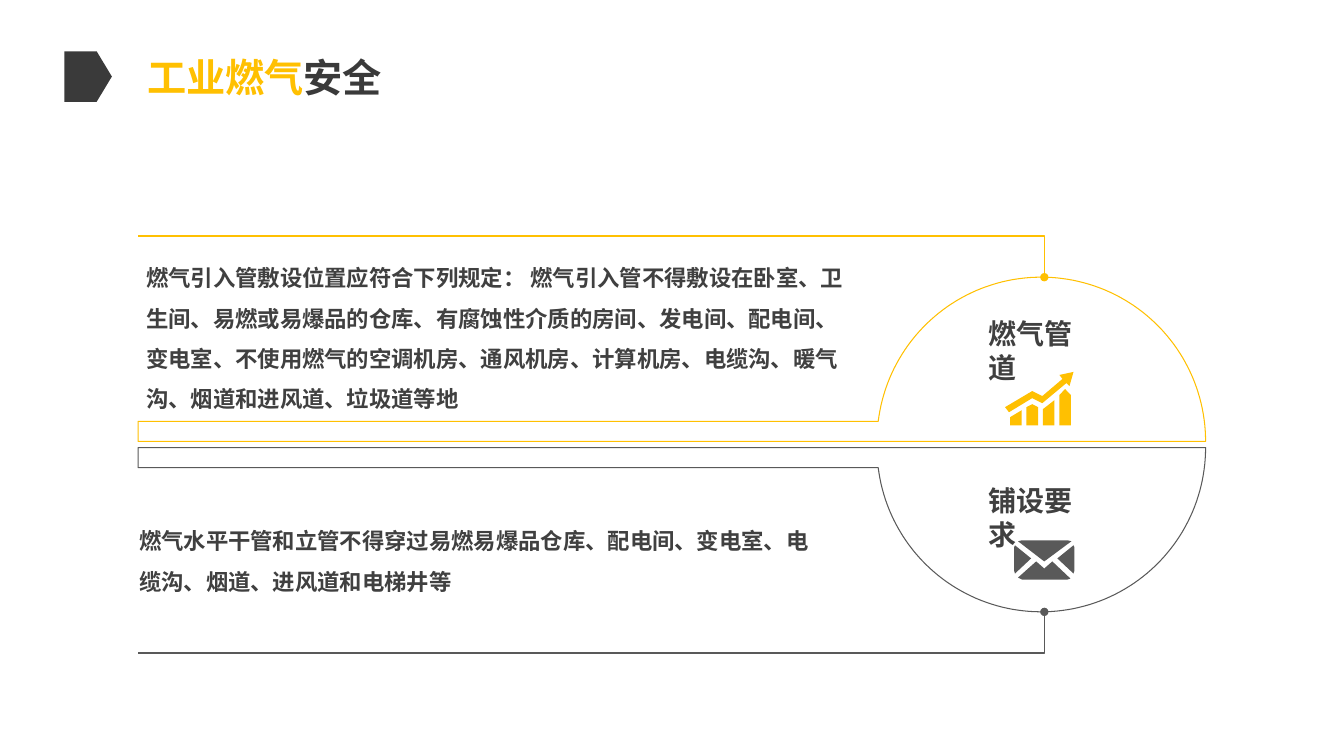
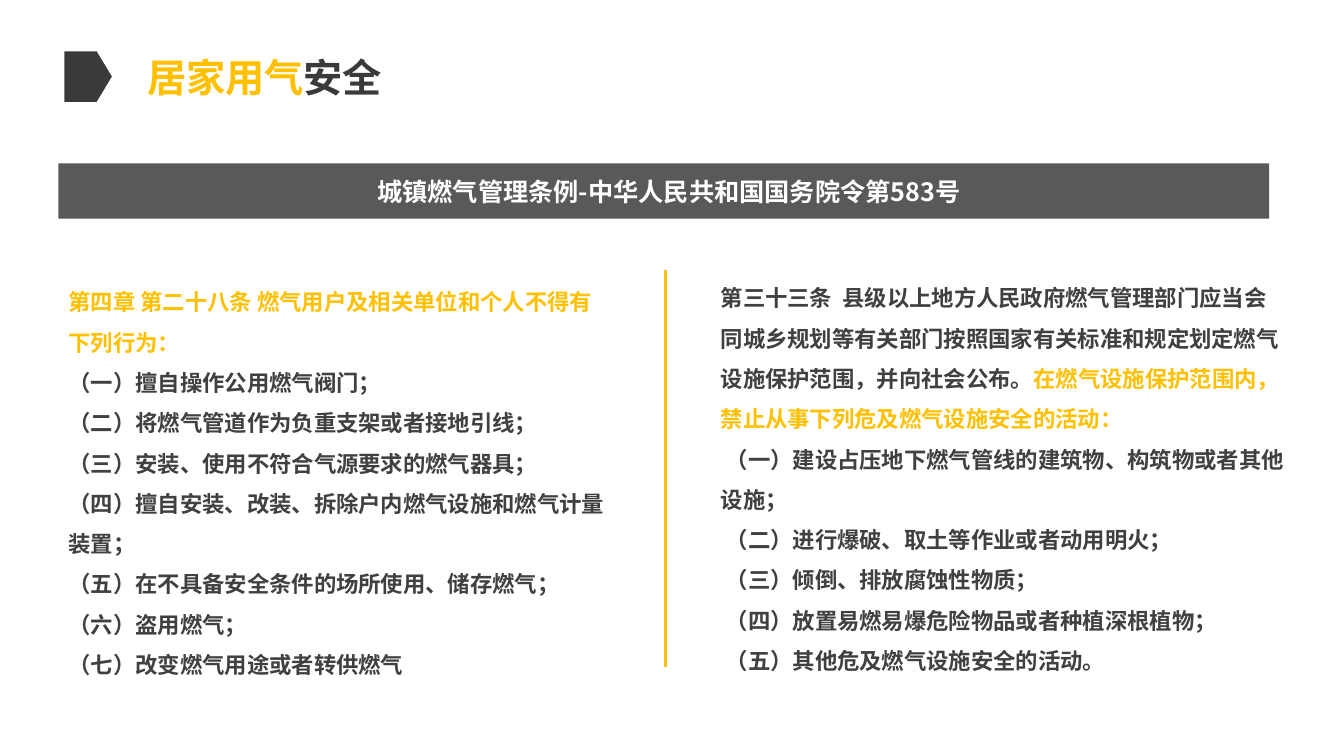
import math
from dataclasses import dataclass

import pptx
import pptx.dml.color
import pptx.enum.shapes
import pptx.enum.text
import pptx.oxml.ns
import pptx.slide
import pptx.util
from lxml import etree

RGBColor = pptx.dml.color.RGBColor
ShapeType = pptx.enum.shapes.MSO_SHAPE

# Shared look
AMBER = RGBColor(0xFF, 0xC0, 0x01)
GREY = RGBColor(0x59, 0x59, 0x59)
CHARCOAL = RGBColor(0x3A, 0x3A, 0x3A)
BODY_COLOR = RGBColor(0x40, 0x40, 0x40)
WHITE = RGBColor(0xFF, 0xFF, 0xFF)
FONT = "Noto Sans CJK SC"
COLUMNS, ROWS = 133.33, 75  # grid cells are a tenth of an inch

Point = tuple[float, float]


@dataclass(frozen=True)
class Box:
    column: float
    row: float
    width: float
    height: float

    def lengths(self) -> list[pptx.util.Length]:
        return [cells(n) for n in (self.column, self.row, self.width, self.height)]


@dataclass(frozen=True)
class Run:
    text: str
    color: RGBColor = BODY_COLOR


@dataclass(frozen=True)
class Indent:
    left: float = 0
    first: float = 0


@dataclass(frozen=True)
class Topic:
    label: str
    label_row: float
    color: RGBColor
    mirrored: bool
    icon: list[list[Point]]


def cells(count: float) -> pptx.util.Length:
    return pptx.util.Inches(count / 10)


# Text
def set_font(font, size: float, color: RGBColor) -> None:
    font.size, font.bold, font.name = pptx.util.Pt(size), True, FONT
    font.color.rgb = color
    east_asian = etree.SubElement(font._element if hasattr(font, "_element") else font._rPr,
                                  pptx.oxml.ns.qn("a:ea"))
    east_asian.set("typeface", FONT)


def write_paragraph(paragraph, runs: list[Run], size: float, spacing: float = 1,
                    indent: Indent = Indent()) -> None:
    paragraph.line_spacing = spacing
    paragraph.space_before = pptx.util.Pt(0)
    properties = paragraph._p.get_or_add_pPr()
    properties.set("marL", str(cells(indent.left)))
    properties.set("indent", str(cells(indent.first)))
    etree.SubElement(properties, pptx.oxml.ns.qn("a:buNone"))
    set_font(paragraph.font, size, runs[0].color)
    for item in runs:
        run = paragraph.add_run()
        run.text = item.text
        if item.color != runs[0].color:
            run.font.color.rgb = item.color


def place(shape, box: Box) -> None:
    shape.left, shape.top, shape.width, shape.height = box.lengths()
    shape.text_frame.word_wrap = True
    shape.text_frame.auto_size = pptx.enum.text.MSO_AUTO_SIZE.NONE


def fill_body(slide: pptx.slide.Slide, index: int, box: Box, paragraphs: list[list[Run]],
              indents: list[Indent]) -> None:
    body = slide.placeholders[index]
    place(body, box)
    for number, (runs, indent) in enumerate(zip(paragraphs, indents)):
        frame = body.text_frame
        paragraph = frame.add_paragraph() if number else frame.paragraphs[0]
        write_paragraph(paragraph, runs, 16, 1.5, indent)


# Shapes
def add_block(slide: pptx.slide.Slide, kind, box: Box, color: RGBColor):
    shape = slide.shapes.add_shape(kind, *box.lengths())
    shape.shadow.inherit = False
    shape.fill.solid()
    shape.fill.fore_color.rgb = color
    shape.line.fill.background()
    return shape


def add_outline(slide: pptx.slide.Slide, contours: list[list[Point]], closed: bool = True):
    points = [[(cells(x), cells(y)) for x, y in contour] for contour in contours]
    builder = slide.shapes.build_freeform(*points[0][0])
    for number, contour in enumerate(points):
        if number:
            builder.move_to(*contour[0])
        builder.add_line_segments(contour[1:], close=closed)
    shape = builder.convert_to_shape()
    shape.shadow.inherit = False
    return shape


def add_line_art(slide: pptx.slide.Slide, points: list[Point], color: RGBColor,
                 width: float, closed: bool) -> None:
    shape = add_outline(slide, [points], closed)
    shape.fill.background()
    shape.line.color.rgb = color
    shape.line.width = pptx.util.Pt(width)
    if not closed:
        tail = etree.SubElement(shape.line._get_or_add_ln(), pptx.oxml.ns.qn("a:tailEnd"))
        tail.set("type", "oval")


def add_titled_slide(presentation, highlight: str, rest: str) -> pptx.slide.Slide:
    slide = presentation.slides.add_slide(presentation.slide_layouts.get_by_name("Two Content"))
    marker = add_block(slide, ShapeType.PENTAGON, Box(6.4, 5.1, 4.7, 5), CHARCOAL)
    marker.adjustments[0] = 0.32
    place(slide.shapes.title, Box(6.4, 4.8, 39.7, 5.7))
    write_paragraph(slide.shapes.title.text_frame.paragraphs[0],
                    [Run(highlight, AMBER), Run(rest, CHARCOAL)], 28)
    return slide


# Pipeline slide: two mirrored half-circle panels
MIRROR_ROW = 44.1
LEFT, CENTER, RADIUS, BASE, NECK = 13.7, 103.3, 16.3, 43.8, 41.8


def half_circle_panel() -> list[Point]:
    start = math.pi + math.asin((BASE - NECK) / RADIUS)
    steps = 90
    angles = [start + (2 * math.pi - start) * step / steps for step in range(steps + 1)]
    arc = [(CENTER + RADIUS * math.cos(a), BASE + RADIUS * math.sin(a)) for a in angles]
    return [(LEFT, BASE), (LEFT, NECK), *arc]


def growth_icon() -> list[list[Point]]:
    tops = [(41.4, 40.7), (40.4, 40.1, 40.4), (40.6, 39.7), (39.2, 38.6, 39.2)]
    contours = []
    for number, heights in enumerate(tops):
        left, width = 100.2 + 1.63 * number, 1.15
        step = width / (len(heights) - 1)
        top = [(left + step * i, height) for i, height in enumerate(heights)]
        contours.append([(left, 42.2), *top, (left + width, 42.2)])
    arrow = [(99.7, 40.4), (102.4, 38.8), (103.4, 39.3), (105.4, 37.6), (105.1, 37.2),
             (106.5, 36.9), (106.1, 38.3), (105.8, 38), (103.4, 40), (102.4, 39.5),
             (100.1, 40.9)]
    return contours + [arrow]


def envelope_icon() -> list[list[Point]]:
    flap = [(101, 53.7), (101.4, 53.6), (105.9, 53.6), (106.3, 53.7), (103.6, 55.7)]
    left = [(100.7, 56.9), (102.3, 55.4), (100.7, 54.1), (100.6, 54.3), (100.6, 56.6)]
    right = [(207.2 - x, y) for x, y in left]
    front = [(101, 57.3), (102.8, 55.7), (103.6, 56.4), (104.4, 55.7), (106.2, 57.4),
             (105.9, 57.5), (101.4, 57.5)]
    return [flap, left, right, front]


def add_topic(slide: pptx.slide.Slide, topic: Topic) -> None:
    def side(points: list[Point]) -> list[Point]:
        return [(x, 2 * MIRROR_ROW - y) for x, y in points] if topic.mirrored else points

    add_line_art(slide, side(half_circle_panel()), topic.color, 0.75, True)
    add_line_art(slide, side([(LEFT, 23.4), (103.6, 23.4), (103.6, 27.5)]),
                 topic.color, 1, False)
    label = slide.shapes.add_textbox(*Box(98.1, topic.label_row, 10, 6.8).lengths())
    frame = label.text_frame
    frame.word_wrap = True
    frame.margin_left = frame.margin_right = frame.margin_top = frame.margin_bottom = 0
    write_paragraph(frame.paragraphs[0], [Run(topic.label)], 20)
    icon = add_outline(slide, topic.icon)
    icon.fill.solid()
    icon.fill.fore_color.rgb = topic.color
    icon.line.fill.background()


def build_pipeline_slide(presentation) -> None:
    slide = add_titled_slide(presentation, "工业燃气", "安全")
    for topic in (Topic("燃气管道", 31.4, AMBER, False, growth_icon()),
                  Topic("铺设要求", 48, GREY, True, envelope_icon())):
        add_topic(slide, topic)
    fill_body(slide, 1, Box(12.8, 24.4, 72.6, 17.2), [[Run(
        "燃气引入管敷设位置应符合下列规定： 燃气引入管不得敷设在卧室、卫生间、易燃或易爆品的仓库、"
        "有腐蚀性介质的房间、发电间、配电间、变电室、不使用燃气的空调机房、通风机房、计算机房、"
        "电缆沟、暖气沟、烟道和进风道、垃圾道等地")]], [Indent(0.7)])
    fill_body(slide, 2, Box(12.8, 50.5, 70.2, 9.1), [[Run(
        "燃气水平干管和立管不得穿过易燃易爆品仓库、配电间、变电室、电缆沟、烟道、进风道和电梯井等")]],
        [Indent()])


# Household slide: heading bar and two columns of rules
def build_household_slide(presentation) -> None:
    slide = add_titled_slide(presentation, "居家用气", "安全")
    bar = add_block(slide, ShapeType.RECTANGLE, Box(5.8, 16.2, 120.1, 5.5), GREY)
    bar.text_frame.margin_left = cells(2)
    heading = bar.text_frame.paragraphs[0]
    heading.alignment = pptx.enum.text.PP_ALIGN.CENTER
    write_paragraph(heading, [Run("城镇燃气管理条例-中华人民共和国国务院令第583号", WHITE)], 18)

    divider = slide.shapes.add_connector(pptx.enum.shapes.MSO_CONNECTOR.STRAIGHT,
                                         cells(66), cells(26.8), cells(66), cells(66.2))
    divider.line.color.rgb = AMBER
    divider.line.width = pptx.util.Pt(2)
    etree.SubElement(divider._element.spPr, pptx.oxml.ns.qn("a:effectLst"))

    user_rules = ["（一）擅自操作公用燃气阀门；",
                  "（二）将燃气管道作为负重支架或者接地引线；",
                  "（三）安装、使用不符合气源要求的燃气器具；",
                  "（四）擅自安装、改装、拆除户内燃气设施和燃气计量装置；",
                  "（五）在不具备安全条件的场所使用、储存燃气；",
                  "（六）盗用燃气；",
                  "（七）改变燃气用途或者转供燃气"]
    user_heading = [Run("第四章 第二十八条 燃气用户及相关单位和个人不得有下列行为：", AMBER)]
    fill_body(slide, 1, Box(5.8, 26.8, 55.6, 41.4),
              [user_heading] + [[Run(rule)] for rule in user_rules],
              [Indent()] * (len(user_rules) + 1))

    zone_rules = ["（一）建设占压地下燃气管线的建筑物、构筑物或者其他设施；",
                  "（二）进行爆破、取土等作业或者动用明火；",
                  "（三）倾倒、排放腐蚀性物质；",
                  "（四）放置易燃易爆危险物品或者种植深根植物；",
                  "（五）其他危及燃气设施安全的活动。"]
    zone_heading = [Run("第三十三条  县级以上地方人民政府燃气管理部门应当会同城乡规划等有关部门"
                        "按照国家有关标准和规定划定燃气设施保护范围，并向社会公布。"),
                    Run("在燃气设施保护范围内，禁止从事下列危及燃气设施安全的活动：", AMBER)]
    fill_body(slide, 2, Box(70.1, 26.4, 58.5, 41.4),
              [zone_heading] + [[Run(rule)] for rule in zone_rules],
              [Indent(0.4)] + [Indent(0.4, 0.5)] * len(zone_rules))


def main() -> None:
    presentation = pptx.Presentation()
    presentation.slide_width, presentation.slide_height = cells(COLUMNS), cells(ROWS)
    build_pipeline_slide(presentation)
    build_household_slide(presentation)
    presentation.save("out.pptx")


if __name__ == "__main__":
    main()
